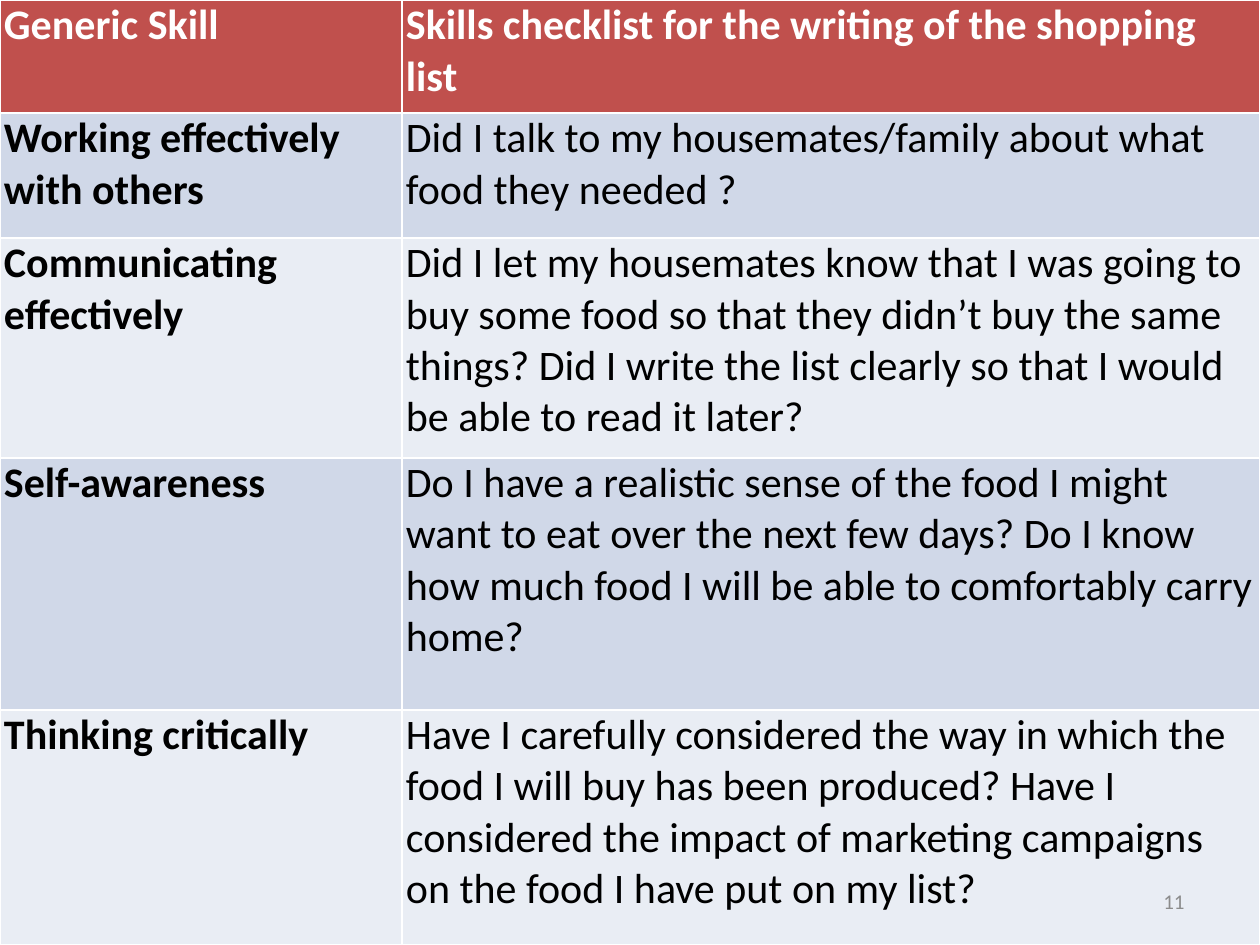
from pptx import Presentation
from pptx.dml.color import RGBColor
from pptx.enum.text import MSO_ANCHOR, PP_ALIGN
from pptx.util import Emu, Pt

LEFT, RIGHT = PP_ALIGN.LEFT, PP_ALIGN.RIGHT
TOP, MIDDLE = MSO_ANCHOR.TOP, MSO_ANCHOR.MIDDLE
BLANK_LAYOUT = 6
EMU_PER_PX = 914400 / 126

COLORS = {
    "header": "C0504D",
    "band_dark": "D0D8E8",
    "band_light": "E9EDF4",
    "white": "FFFFFF",
    "black": "000000",
    "gray": "8C8C8C",
}

COL_WIDTHS = [402, 858]
ROW_HEIGHTS = [113, 125, 220, 252, 235]
SKILLS = [
    ("Generic Skill", "Skills checklist for the writing of the shopping list"),
    ("Working effectively with others",
     "Did I talk to my housemates/family about what food they needed ?"),
    ("Communicating effectively",
     "Did I let my housemates know that I was going to buy some food so that "
     "they didn’t buy the same things? Did I write the list clearly so that "
     "I would be able to read it later?"),
    ("Self-awareness",
     "Do I have a realistic sense of the food I might want to eat over the "
     "next few days? Do I know how much food I will be able to comfortably "
     "carry home?"),
    ("Thinking critically",
     "Have I carefully considered the way in which the food I will buy has "
     "been produced? Have I considered the impact of marketing campaigns on "
     "the food I have put on my list?"),
]


def px(n):
    return Emu(round(n * EMU_PER_PX))


def rgb(name):
    return RGBColor.from_string(COLORS[name])


def write(tf, text, size=24, color="black", bold=False, align=LEFT, font="Calibri"):
    tf.word_wrap = True
    p = tf.paragraphs[0]
    p.alignment = align
    r = p.add_run()
    r.text = text
    r.font.name = font
    r.font.size = Pt(size)
    r.font.bold = bold
    r.font.color.rgb = rgb(color)


class SlideBuilder:
    def __init__(self, prs):
        self.s = prs.slides.add_slide(prs.slide_layouts[BLANK_LAYOUT])

    def cell(self, cell, text, fill, **fmt):
        cell.fill.solid()
        cell.fill.fore_color.rgb = rgb(fill)
        cell.margin_left = cell.margin_right = px(4)
        cell.margin_top = cell.margin_bottom = 0
        cell.vertical_anchor = TOP
        write(cell.text_frame, text, **fmt)

    def table(self, x, y, widths, heights, rows):
        table = self.s.shapes.add_table(
            len(heights), len(widths), px(x), px(y),
            px(sum(widths)), px(sum(heights))).table
        for col, width in zip(table.columns, widths):
            col.width = px(width)
        for row, height in zip(table.rows, heights):
            row.height = px(height)
        for i, texts in enumerate(rows):
            header = i == 0
            fill = "header" if header else "band_dark" if i % 2 else "band_light"
            for j, text in enumerate(texts):
                self.cell(table.cell(i, j), text, fill,
                          color="white" if header else "black",
                          bold=header or j == 0)

    def text(self, x, y, w, h, text, anchor=TOP, **fmt):
        sp = self.s.shapes.add_textbox(px(x), px(y), px(w), px(h))
        sp.text_frame.vertical_anchor = anchor
        write(sp.text_frame, text, **fmt)


def main():
    prs = Presentation()
    prs.slide_width, prs.slide_height = px(1260), px(945)
    slide = SlideBuilder(prs)
    slide.table(0, 0, COL_WIDTHS, ROW_HEIGHTS, SKILLS)
    slide.text(903, 876, 294, 50, "11", anchor=MIDDLE,
               size=12, color="gray", align=RIGHT)
    prs.save("out.pptx")


if __name__ == "__main__":
    main()
